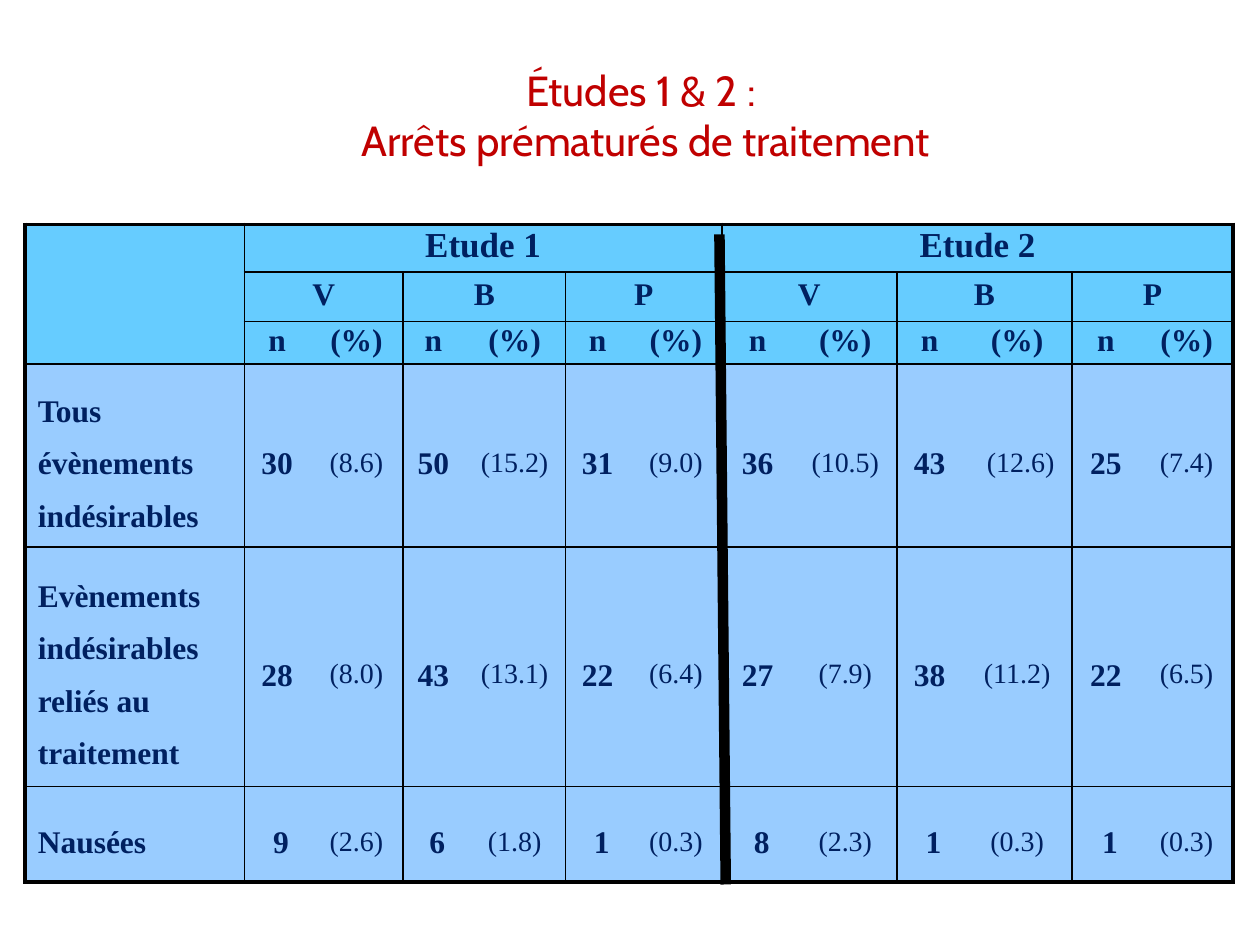
from lxml import etree
from pptx import Presentation
from pptx.dml.color import RGBColor
from pptx.enum import shapes, text
from pptx.oxml.ns import qn
from pptx.util import Inches, Pt

RED = RGBColor(0xC0, 0x00, 0x00)
NAVY = RGBColor(0x00, 0x20, 0x60)
SKY = RGBColor(0x66, 0xCC, 0xFF)
PALE = RGBColor(0x99, 0xCC, 0xFF)
BLACK = RGBColor(0x00, 0x00, 0x00)

TITLE = "Études 1 & 2 : \vArrêts prématurés de traitement"
STUDIES = ["Etude 1", "Etude 2"]
ARMS = ["V", "B", "P"]
HEADS = ["n", "(%)"]
BODY = [
    ["Tous évènements indésirables", "30", "(8.6)", "50", "(15.2)", "31", "(9.0)",
     "36", "(10.5)", "43", " (12.6)", "25", "(7.4)"],
    ["Evènements indésirables reliés au traitement", "28", "(8.0)", "43", "(13.1)",
     "22", "(6.4)", "27", "(7.9)", "38", "(11.2)", "22", "(6.5)"],
    ["Nausées", " 9", "(2.6)", " 6", "(1.8)", " 1", "(0.3)",
     " 8", "(2.3)", " 1", "(0.3)", " 1", "(0.3)"],
]
COLS = [1.74, 0.52, 0.74, 0.48, 0.81, 0.51, 0.73, 0.57, 0.82, 0.52, 0.87, 0.54, 0.74]
ROWS = [0.38, 0.39, 0.34, 1.45, 1.9, 0.76]
SPANS = [6, 2, 1, 1, 1, 1]
HEAD = len(ROWS) - len(BODY)
THICK, THIN = 2.25, 1
PLAIN_STYLE = "{2D5ABB26-0587-4C30-8999-92F81FD0307C}"


def apply(item, vals):
    for key, val in vals.items():
        setattr(item, key, val)


def style(para, font, color, **vals):
    for run in para.runs:
        apply(run.font, {"name": font, **vals})
        run.font.color.rgb = color


def border(cell, side, width):
    props = cell._tc.get_or_add_tcPr()
    line = etree.SubElement(props, qn("a:" + side))
    if not width:
        etree.SubElement(line, qn("a:noFill"))
        return
    line.set("w", str(Pt(width)))
    fill = etree.SubElement(line, qn("a:solidFill"))
    etree.SubElement(fill, qn("a:srgbClr")).set("val", str(BLACK))


def edge_x(col):
    if col in (0, len(COLS)):
        return THICK
    return THIN if col % 2 else 0


def edge_y(row, col):
    if row in (0, len(ROWS)):
        return THICK
    return 0 if col == 0 and row < HEAD else THIN


def fill_cell(cell, row, col, label):
    head = row < HEAD
    span = SPANS[row] if col else 1
    start = col - (col - 1) % span if col else 0
    end = start + span
    first = col == start
    last = col == end - 1
    border(cell, "lnL", edge_x(col) if first else 0)
    border(cell, "lnR", edge_x(end) if first or last else 0)
    border(cell, "lnT", edge_y(row, col))
    border(cell, "lnB", edge_y(row + 1, col))
    cell.fill.solid()
    cell.fill.fore_color.rgb = SKY if head else PALE
    pad = Inches(0.05 if label else 0)
    apply(cell, {"margin_left": Inches(0.1), "margin_right": Inches(0.1),
                 "margin_top": pad, "margin_bottom": pad,
                 "vertical_anchor": text.MSO_ANCHOR.MIDDLE})
    if not label:
        return
    cell.text = label
    para = cell.text_frame.paragraphs[0]
    apply(para, {"alignment": text.PP_ALIGN.CENTER if col else text.PP_ALIGN.LEFT,
                 "line_spacing": 0.8 if head else 1.5})
    rate = not head and col > 0 and col % 2 == 0
    size = 20 if row == 0 else 16 if rate else 18
    style(para, "Times New Roman", NAVY, size=Pt(size), bold=not rate)


def add_title(slide):
    box = slide.shapes.add_textbox(Inches(0.25), Inches(0.48), Inches(9.75), Inches(0.86))
    frame = box.text_frame
    apply(frame, {"word_wrap": True, "vertical_anchor": text.MSO_ANCHOR.MIDDLE})
    para = frame.paragraphs[0]
    para.text = TITLE
    para.alignment = text.PP_ALIGN.CENTER
    style(para, "Cabin", RED, size=Pt(24))


def add_grid(slide):
    spread = [STUDIES, ARMS * 2, HEADS * 6]
    cells = [[""] + [label for name in names for label in [name] + [""] * (span - 1)]
             for names, span in zip(spread, SPANS)] + BODY
    shape = slide.shapes.add_table(len(ROWS), len(COLS), Inches(0.2), Inches(1.78),
                                   Inches(sum(COLS)), Inches(sum(ROWS)))
    table = shape.table
    apply(table, {"first_row": False, "horz_banding": False})
    table._tbl.tblPr.find(qn("a:tableStyleId")).text = PLAIN_STYLE
    for part, size in zip(table.columns, COLS):
        part.width = Inches(size)
    for part, size in zip(table.rows, ROWS):
        part.height = Inches(size)
    for row, labels in enumerate(cells):
        span = SPANS[row]
        if span > 1:
            for col in range(1, len(COLS), span):
                table.cell(row, col).merge(table.cell(row, col + span - 1))
        for col, label in enumerate(labels):
            fill_cell(table.cell(row, col), row, col, label)


def add_split(slide):
    line = slide.shapes.add_connector(shapes.MSO_CONNECTOR.STRAIGHT, Inches(5.71),
                                      Inches(1.86), Inches(5.76), Inches(7.02))
    line.line.color.rgb = BLACK
    line.line.width = Pt(6)
    etree.SubElement(line._element.spPr, qn("a:effectLst"))


def main():
    deck = Presentation()
    apply(deck, {"slide_width": Inches(10), "slide_height": Inches(7.5)})
    slide = deck.slides.add_slide(deck.slide_layouts[6])
    add_title(slide)
    add_grid(slide)
    add_split(slide)
    deck.save("out.pptx")


if __name__ == "__main__":
    main()
